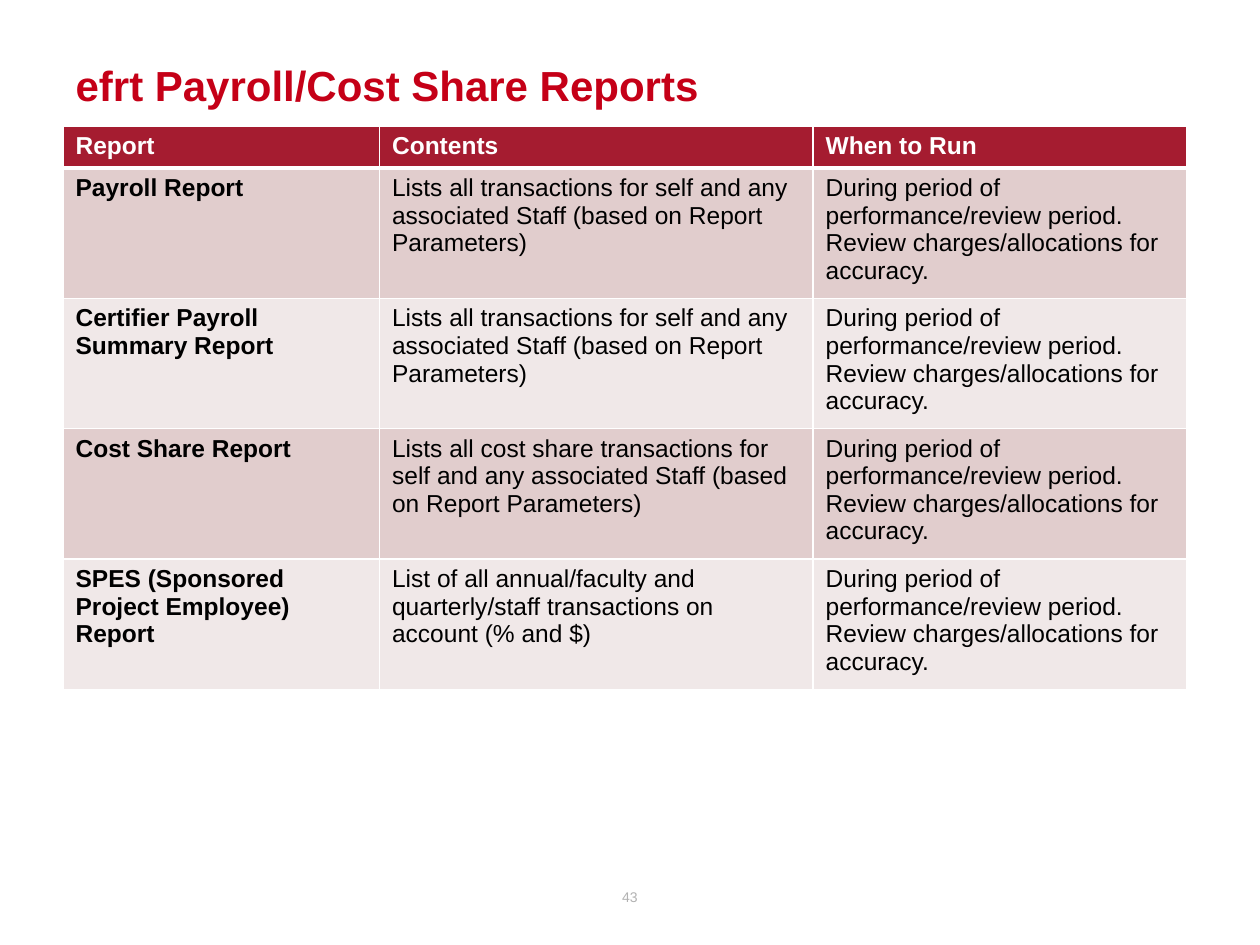
"""Build the slide listing the payroll and cost share reports."""
import lxml.etree
import pptx
import pptx.dml.color
import pptx.enum.text
import pptx.oxml.ns
import pptx.util

Cm = pptx.util.Cm
Pt = pptx.util.Pt

TITLE = "efrt Payroll/Cost Share Reports"
PAGE_NUMBER = "43"
HEADINGS = ("Report", "Contents", "When to Run")
WHEN_TO_RUN = "During period of performance/review period. Review charges/allocations for accuracy."
STAFF_TRANSACTIONS = (
    "Lists all {}transactions for self and any associated Staff (based on Report Parameters)"
)
REPORTS = (
    ("Payroll Report", STAFF_TRANSACTIONS.format("")),
    ("Certifier Payroll Summary Report", STAFF_TRANSACTIONS.format("")),
    ("Cost Share Report", STAFF_TRANSACTIONS.format("cost share ")),
    (
        "SPES (Sponsored Project Employee) Report",
        "List of all annual/faculty and quarterly/staff transactions on account (% and $)",
    ),
)
COLORS = {
    "title": "C50017",
    "header": "A51C30",
    "odd": "E1CDCD",
    "even": "F0E8E8",
    "white": "FFFFFF",
    "text": "000000",
    "number": "B2B2B2",
}
FONT = "Arial"
COLUMN_WIDTHS = (6.38, 8.74, 7.54)
HEADER_HEIGHT = 0.84
ROW_HEIGHT = 1.7


def rgb(name):
    return pptx.dml.color.RGBColor.from_string(COLORS[name])


def write(text_frame, text, size, color, bold=False, alignment=pptx.enum.text.PP_ALIGN.LEFT):
    paragraph = text_frame.paragraphs[0]
    paragraph.alignment = alignment
    run = paragraph.add_run()
    run.text = text
    run.font.name = FONT
    run.font.size = Pt(size)
    run.font.bold = bold
    run.font.color.rgb = rgb(color)


def add_borders(cell, bottom_width):
    properties = cell._tc.get_or_add_tcPr()
    qualified = pptx.oxml.ns.qn
    for side, width in (("L", 1), ("R", 1), ("T", 1), ("B", bottom_width)):
        line = lxml.etree.SubElement(properties, qualified(f"a:ln{side}"), w=str(Pt(width)))
        fill = lxml.etree.SubElement(line, qualified("a:solidFill"))
        lxml.etree.SubElement(fill, qualified("a:srgbClr"), val=COLORS["white"])


def add_title(slide):
    title = slide.shapes.title
    title.left, title.top, title.width, title.height = Cm(1.27), Cm(0.43), Cm(23.06), Cm(2.54)
    title.text_frame.auto_size = pptx.enum.text.MSO_AUTO_SIZE.NONE
    title.text_frame.vertical_anchor = pptx.enum.text.MSO_ANCHOR.MIDDLE
    write(title.text_frame, TITLE, 24, "title", bold=True)


def add_page_number(slide):
    text_frame = slide.shapes.add_textbox(Cm(0), Cm(17.58), Cm(25.4), Cm(1.02)).text_frame
    text_frame.word_wrap = True
    text_frame.vertical_anchor = pptx.enum.text.MSO_ANCHOR.MIDDLE
    write(text_frame, PAGE_NUMBER, 8, "number", alignment=pptx.enum.text.PP_ALIGN.CENTER)


def add_report_table(slide):
    rows = [HEADINGS] + [(*report, WHEN_TO_RUN) for report in REPORTS]
    heights = [HEADER_HEIGHT] + [ROW_HEIGHT] * len(REPORTS)
    table = slide.shapes.add_table(
        len(rows), len(HEADINGS), Cm(1.27), Cm(2.54), Cm(sum(COLUMN_WIDTHS)), Cm(sum(heights))
    ).table
    for column, width in zip(table.columns, COLUMN_WIDTHS):
        column.width = Cm(width)
    for row_index, (texts, height) in enumerate(zip(rows, heights)):
        table.rows[row_index].height = Cm(height)
        is_header = row_index == 0
        fill = "header" if is_header else ("even", "odd")[row_index % 2]
        for column_index, text in enumerate(texts):
            cell = table.cell(row_index, column_index)
            add_borders(cell, 3 if is_header else 1)
            cell.fill.solid()
            cell.fill.fore_color.rgb = rgb(fill)
            write(
                cell.text_frame,
                text,
                14,
                "white" if is_header else "text",
                bold=is_header or column_index == 0,
            )


def main():
    presentation = pptx.Presentation()
    presentation.slide_width, presentation.slide_height = Cm(25.4), Cm(19.05)
    slide = presentation.slides.add_slide(presentation.slide_layouts.get_by_name("Title Only"))
    add_title(slide)
    add_page_number(slide)
    add_report_table(slide)
    presentation.save("out.pptx")


if __name__ == "__main__":
    main()
